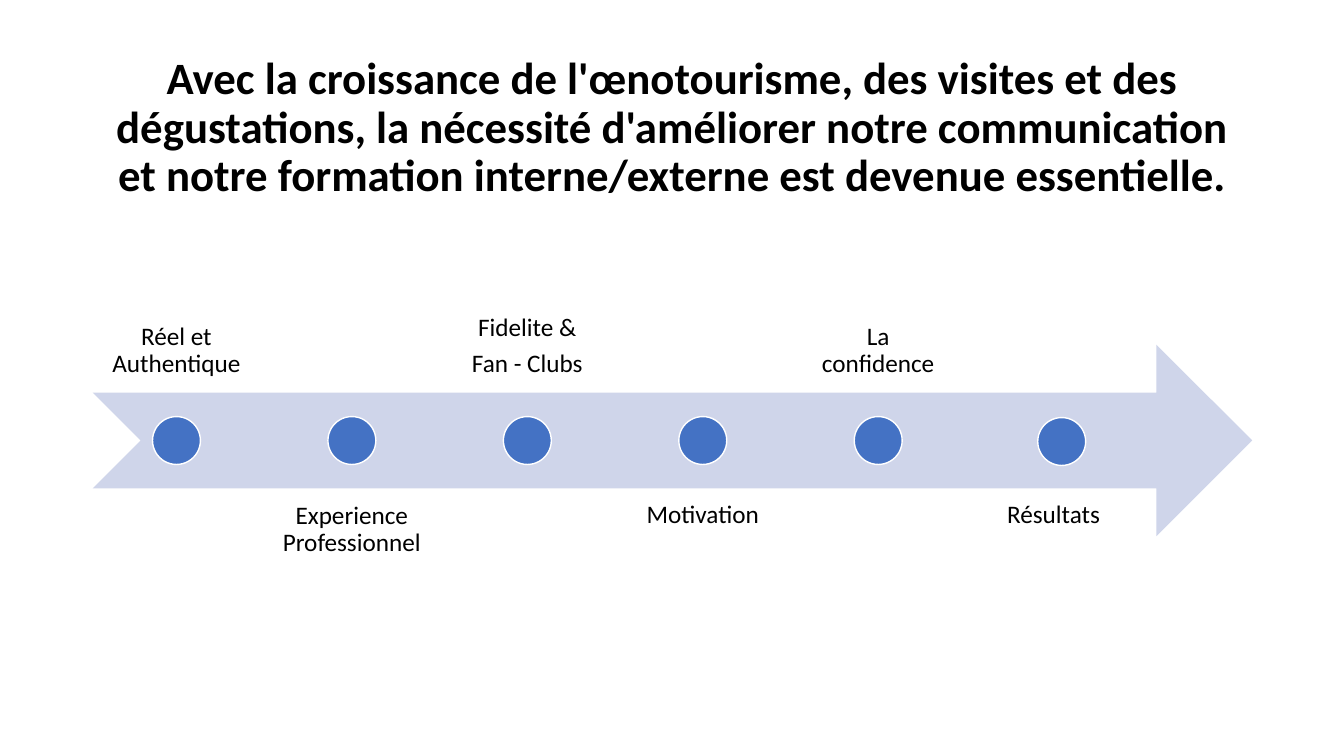
"""Build the wine tourism slide: a title above a six-step arrow timeline."""
import pptx
import pptx.dml.color
import pptx.enum.shapes
import pptx.enum.text
import pptx.util

Inches = pptx.util.Inches
Pt = pptx.util.Pt
Shape = pptx.enum.shapes.MSO_SHAPE
Anchor = pptx.enum.text.MSO_ANCHOR


def color(hex_value):
    return pptx.dml.color.RGBColor.from_string(hex_value)


def add_text(box, lines, anchor, inset, size, bold=False):
    left, top, width, height = map(Inches, box)
    frame = slide.shapes.add_textbox(left, top, width, height).text_frame
    margins = {"margin_left": inset[0], "margin_right": inset[0],
               "margin_top": inset[1], "margin_bottom": inset[1]}
    for name, value in margins.items():
        setattr(frame, name, Inches(value))
    frame.word_wrap = True
    frame.vertical_anchor = anchor
    frame.text = "\n".join(lines)
    for paragraph in frame.paragraphs:
        paragraph.alignment = pptx.enum.text.PP_ALIGN.CENTER
        paragraph.line_spacing = 0.9
        paragraph.space_after = Pt(0 if bold else 0.35 * size)
        font = paragraph.runs[0].font
        for name, value in {"name": "Calibri", "size": Pt(size), "bold": bold}.items():
            setattr(font, name, value)
        font.color.rgb = color("000000")


presentation = pptx.Presentation()
presentation.slide_width = Inches(13.33)
presentation.slide_height = Inches(7.5)
slide = presentation.slides.add_slide(presentation.slide_layouts[6])

left, width = 0.92, 11.5
band_top, band_height = 3.42, 1.9
step, label_width = 1.74, 1.66
dot_size = band_height / 4
dot_top = band_top + (band_height - dot_size) / 2

add_text(
    (left, 0.55, width, 1.45),
    ["Avec la croissance de l'œnotourisme, des visites et des dégustations, "
     "la nécessité d'améliorer notre communication et notre formation "
     "interne/externe est devenue essentielle."],
    Anchor.MIDDLE, (0.1, 0.05), 32, bold=True)

arrow = slide.shapes.add_shape(
    Shape.NOTCHED_RIGHT_ARROW,
    Inches(left), Inches(band_top), Inches(width), Inches(band_height))
arrow.shadow.inherit = False
arrow.fill.solid()
arrow.fill.fore_color.rgb = color("CFD5EA")
arrow.line.fill.background()

steps = [
    (["Réel et Authentique"], 0, 0),
    (["Experience Professionnel"], 0, 0),
    (["Fidelite &", "Fan - Clubs"], 0, 0),
    (["Motivation"], 0, 0),
    (["La confidence"], 0, 0),
    (["Résultats"], 0.08, 0.01),
]
for column, (label, shift_x, shift_y) in enumerate(steps):
    label_left = left + column * step
    below = column % 2
    label_top = band_top + 0.75 * band_height if below else band_top - 0.75 * band_height
    add_text((label_left, label_top, label_width, band_height), label,
             Anchor.TOP if below else Anchor.BOTTOM, (0.14, 0.14), 18)

    dot_left = label_left + (label_width - dot_size) / 2 + shift_x
    dot = slide.shapes.add_shape(
        Shape.OVAL, Inches(dot_left), Inches(dot_top + shift_y),
        Inches(dot_size), Inches(dot_size))
    dot.shadow.inherit = False
    dot.fill.solid()
    dot.fill.fore_color.rgb = color("4472C4")
    dot.line.color.rgb = color("FFFFFF")
    dot.line.width = Pt(1)

presentation.save("out.pptx")
